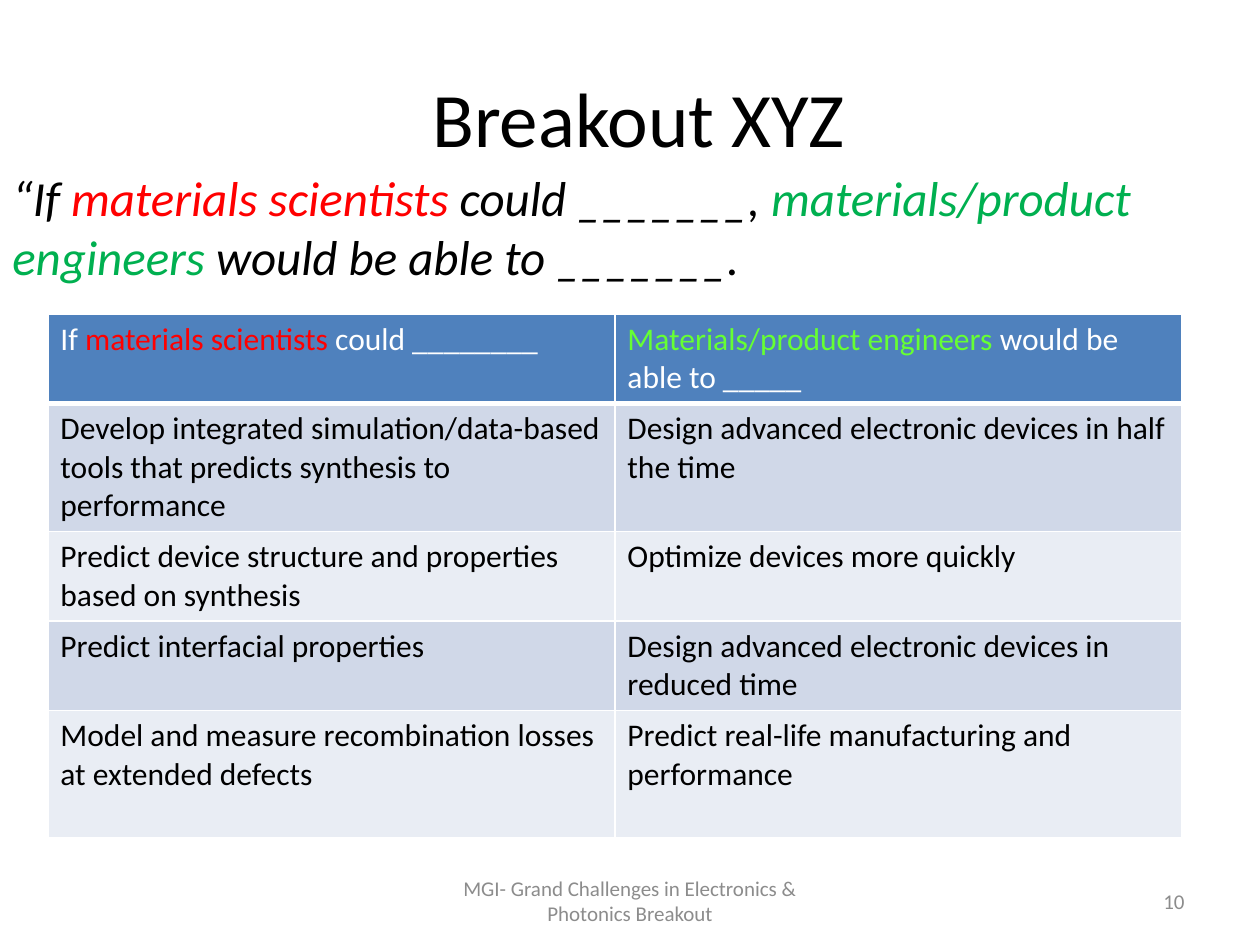
from dataclasses import dataclass

from lxml.etree import SubElement
from pptx import Presentation
from pptx.dml.color import RGBColor
from pptx.enum.text import MSO_ANCHOR, PP_ALIGN
from pptx.oxml.ns import qn
from pptx.util import Pt

BLACK = RGBColor(0x00, 0x00, 0x00)
WHITE = RGBColor(0xFF, 0xFF, 0xFF)
RED = RGBColor(0xFF, 0x00, 0x00)
GREEN = RGBColor(0x00, 0xB0, 0x50)
LIME = RGBColor(0x66, 0xFF, 0x33)
GRAY = RGBColor(0x8C, 0x8C, 0x8C)
HEADER_BLUE = RGBColor(0x4F, 0x81, 0xBD)
BAND_DARK = RGBColor(0xD0, 0xD8, 0xE8)
BAND_LIGHT = RGBColor(0xE9, 0xED, 0xF4)
FONT = "Calibri"


@dataclass(frozen=True)
class Span:
    text: str
    color: RGBColor = BLACK


@dataclass(frozen=True)
class Caption:
    left: float
    top: float
    width: float
    height: float
    size: float
    spans: tuple[Span, ...]
    align: PP_ALIGN = PP_ALIGN.LEFT
    anchor: MSO_ANCHOR = MSO_ANCHOR.MIDDLE
    italic: bool = False


CAPTIONS = (
    Caption(27.36, 21.6, 675.36, 90, 44, (Span("Breakout XYZ"),), PP_ALIGN.CENTER),
    Caption(0, 92.16, 684, 74.88, 28, (
        Span("“If "),
        Span("materials scientists ", RED),
        Span("could _______, "),
        Span("materials/product engineers ", GREEN),
        Span("would be able to _______."),
    ), anchor=MSO_ANCHOR.TOP, italic=True),
    Caption(246, 500.4, 228, 28.8, 12, (
        Span("MGI- Grand Challenges in Electronics & Photonics Breakout", GRAY),
    ), PP_ALIGN.CENTER),
    Caption(516, 500.4, 168, 28.8, 12, (Span("10", GRAY),), PP_ALIGN.RIGHT),
)

HEADERS = (
    (Span("If ", WHITE), Span("materials scientists ", RED), Span("could ________", WHITE)),
    (Span("Materials/product engineers ", LIME), Span("would be able to _____", WHITE)),
)
GOALS = (
    ("Develop integrated simulation/data-based tools that predicts synthesis to performance",
     "Design advanced electronic devices in half the time"),
    ("Predict device structure and properties based on synthesis",
     "Optimize devices more quickly"),
    ("Predict interfacial properties",
     "Design advanced electronic devices in reduced time"),
    ("Model and measure recombination losses at extended defects",
     "Predict real-life manufacturing and performance"),
)
ROW_HEIGHTS = (51, 73, 51, 51, 73)
COLUMN_WIDTH = 324


def write_spans(para, spans: tuple[Span, ...], size: float, italic: bool = False) -> None:
    para.font.name = FONT
    para.font.size = Pt(size)
    para.font.italic = italic
    for span in spans:
        run = para.add_run()
        run.text = span.text
        run.font.color.rgb = span.color


def add_caption(page, caption: Caption) -> None:
    box = page.shapes.add_textbox(
        Pt(caption.left), Pt(caption.top), Pt(caption.width), Pt(caption.height))
    frame = box.text_frame
    frame.word_wrap = True
    frame.vertical_anchor = caption.anchor
    para = frame.paragraphs[0]
    para.alignment = caption.align
    write_spans(para, caption.spans, caption.size, caption.italic)


def set_border(cell, side: str, width: float) -> None:
    properties = cell._tc.get_or_add_tcPr()
    line = SubElement(properties, qn(f"a:{side}"), w=str(Pt(width)))
    fill = SubElement(line, qn("a:solidFill"))
    SubElement(fill, qn("a:srgbClr"), val=str(WHITE))


def fill_cell(cell, spans: tuple[Span, ...], color: RGBColor, top: float, bottom: float) -> None:
    for side, width in (("lnL", 1), ("lnR", 1), ("lnT", top), ("lnB", bottom)):
        set_border(cell, side, width)
    cell.fill.solid()
    cell.fill.fore_color.rgb = color
    write_spans(cell.text_frame.paragraphs[0], spans, 18)


def add_goal_table(page) -> None:
    rows = [HEADERS] + [tuple((Span(text),) for text in goal) for goal in GOALS]
    table = page.shapes.add_table(
        len(rows), len(HEADERS), Pt(27.36), Pt(179.28),
        Pt(COLUMN_WIDTH * len(HEADERS)), Pt(sum(ROW_HEIGHTS))).table
    for column in table.columns:
        column.width = Pt(COLUMN_WIDTH)
    for index, (row, height) in enumerate(zip(rows, ROW_HEIGHTS)):
        table.rows[index].height = Pt(height)
        band = BAND_DARK if index % 2 else BAND_LIGHT
        color = band if index else HEADER_BLUE
        top = 3 if index == 1 else 1
        bottom = 1 if index else 3
        for column_index, spans in enumerate(row):
            fill_cell(table.cell(index, column_index), spans, color, top, bottom)


def main() -> None:
    deck = Presentation()
    deck.slide_width = Pt(720)
    deck.slide_height = Pt(540)
    page = deck.slides.add_slide(deck.slide_layouts[6])
    add_goal_table(page)
    for caption in CAPTIONS:
        add_caption(page, caption)
    deck.save("out.pptx")


if __name__ == "__main__":
    main()
